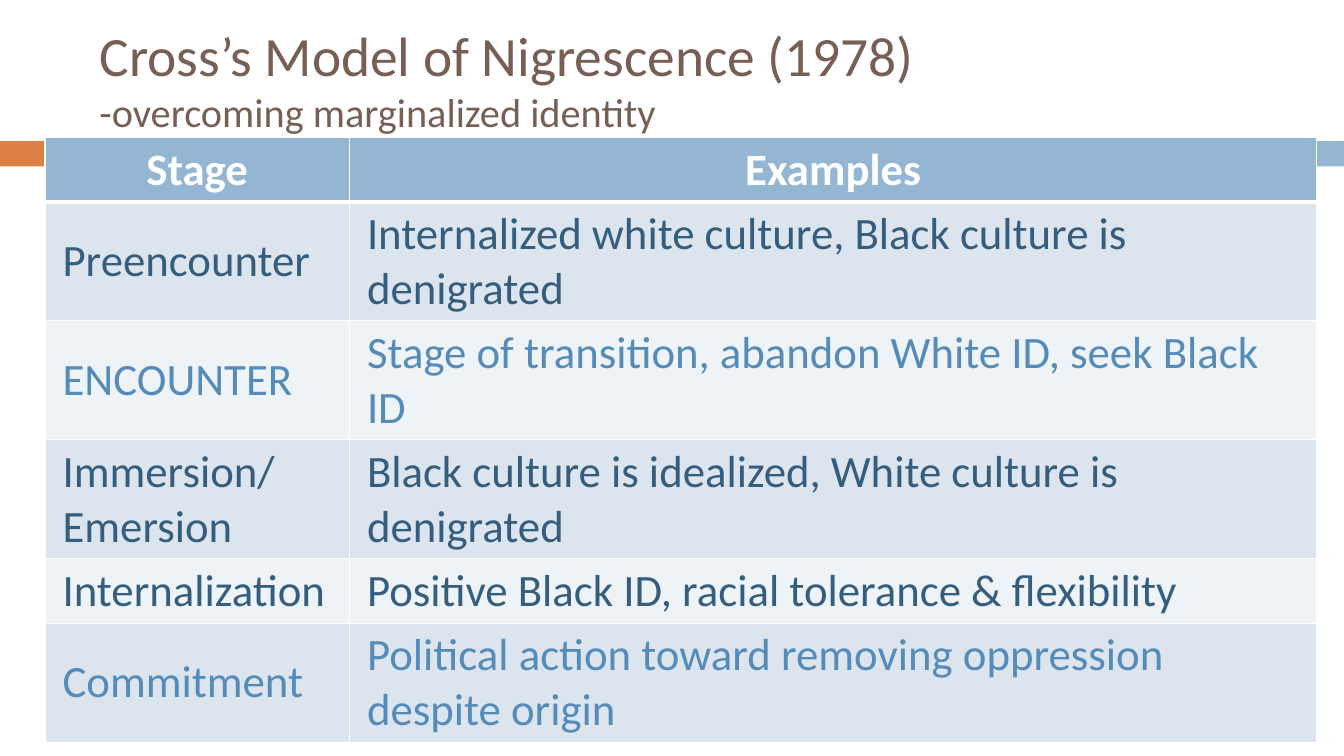
"""Build a slide with a table of the stages in Cross's Model of Nigrescence."""
from dataclasses import dataclass

from lxml.etree import SubElement
from pptx import Presentation
from pptx.dml.color import RGBColor
from pptx.enum.shapes import MSO_SHAPE as Shape
from pptx.enum.text import MSO_ANCHOR as Anchor, PP_ALIGN as Align
from pptx.oxml.ns import qn
from pptx.util import Pt

WHITE, BLUE, ORANGE, BROWN = "FFFFFF", "94B6D2", "DD8047", "775F55"
NAVY, SKY = "355D7E", "558BB8"
BANDS = ("DCE5EE", "EEF3F7")
COL_WIDTHS = (217.5, 691)
LINE_ROW, DOUBLE_ROW = 46, 85


@dataclass
class Bar:
    left: float
    width: float
    color: str


@dataclass
class Stage:
    name: str
    example: str
    color: str = NAVY
    height: float = DOUBLE_ROW


BARS = (Bar(0, 56.2, ORANGE), Bar(61.9, 898.1, BLUE))
STAGES = (
    Stage("Preencounter", "Internalized white culture, Black culture is denigrated"),
    Stage("ENCOUNTER", "Stage of transition, abandon White ID, seek Black ID", SKY),
    Stage("Immersion/Emersion", "Black culture is idealized, White culture is denigrated"),
    Stage("Internalization", "Positive Black ID, racial tolerance & flexibility", height=LINE_ROW),
    Stage("Commitment", "Political action toward removing oppression despite origin", SKY),
)


def rgb(color: str) -> RGBColor:
    return RGBColor.from_string(color)


def add_text(p, text: str, *, size: float, color: str, bold: bool = False,
             align=Align.LEFT) -> None:
    p.alignment = align
    r = p.add_run()
    r.text = text
    r.font.name = "Calibri"
    r.font.size = Pt(size)
    r.font.bold = bold
    r.font.color.rgb = rgb(color)


def draw_bar(s, bar: Bar) -> None:
    sp = s.shapes.add_shape(Shape.RECTANGLE, Pt(bar.left), Pt(100.8), Pt(bar.width), Pt(18))
    sp.shadow.inherit = False
    sp.fill.solid()
    sp.fill.fore_color.rgb = rgb(bar.color)
    sp.line.fill.background()


def draw_title(s) -> None:
    tf = s.shapes.add_textbox(Pt(64), Pt(21.6), Pt(848), Pt(68.4)).text_frame
    tf.word_wrap = True
    tf.vertical_anchor = Anchor.MIDDLE
    p = tf.paragraphs[0]
    add_text(p, "Cross’s Model of Nigrescence (1978)", size=39.6, color=BROWN)
    p.add_line_break()
    add_text(p, "-overcoming marginalized identity", size=28.8, color=BROWN)


def set_borders(cell, top: float, bottom: float) -> None:
    tc_pr = cell._tc.get_or_add_tcPr()
    sides = (("a:lnL", 1), ("a:lnR", 1), ("a:lnT", top), ("a:lnB", bottom))
    for i, (tag, width) in enumerate(sides):
        ln = SubElement(tc_pr, qn(tag), w=str(Pt(width)))
        fill = SubElement(ln, qn("a:solidFill"))
        SubElement(fill, qn("a:srgbClr"), val=WHITE)
        tc_pr.insert(i, ln)


def fill_row(table, i: int, row: Stage) -> None:
    header = i == 0
    table.rows[i].height = Pt(row.height)
    for cell, text in zip(table.rows[i].cells, (row.name, row.example)):
        cell.fill.solid()
        cell.fill.fore_color.rgb = rgb(BLUE if header else BANDS[(i - 1) % 2])
        cell.vertical_anchor = Anchor.MIDDLE
        cell.margin_left = cell.margin_right = Pt(12.5)
        cell.margin_top = cell.margin_bottom = Pt(3.6)
        set_borders(cell, top=3 if i == 1 else 1, bottom=3 if header else 1)
        add_text(cell.text_frame.paragraphs[0], text, size=32, color=row.color,
                 bold=header, align=Align.CENTER if header else Align.LEFT)


def draw_table(s) -> None:
    rows = (Stage("Stage", "Examples", WHITE, LINE_ROW), *STAGES)
    table = s.shapes.add_table(len(rows), len(COL_WIDTHS), Pt(32.2), Pt(98.2),
                               Pt(sum(COL_WIDTHS)), Pt(sum(r.height for r in rows))).table
    for col, width in zip(table.columns, COL_WIDTHS):
        col.width = Pt(width)
    for i, row in enumerate(rows):
        fill_row(table, i, row)


def main() -> None:
    prs = Presentation()
    prs.slide_width, prs.slide_height = Pt(960), Pt(540)
    s = prs.slides.add_slide(prs.slide_layouts[6])
    for bar in BARS:
        draw_bar(s, bar)
    draw_title(s)
    draw_table(s)
    prs.save("out.pptx")


if __name__ == "__main__":
    main()
